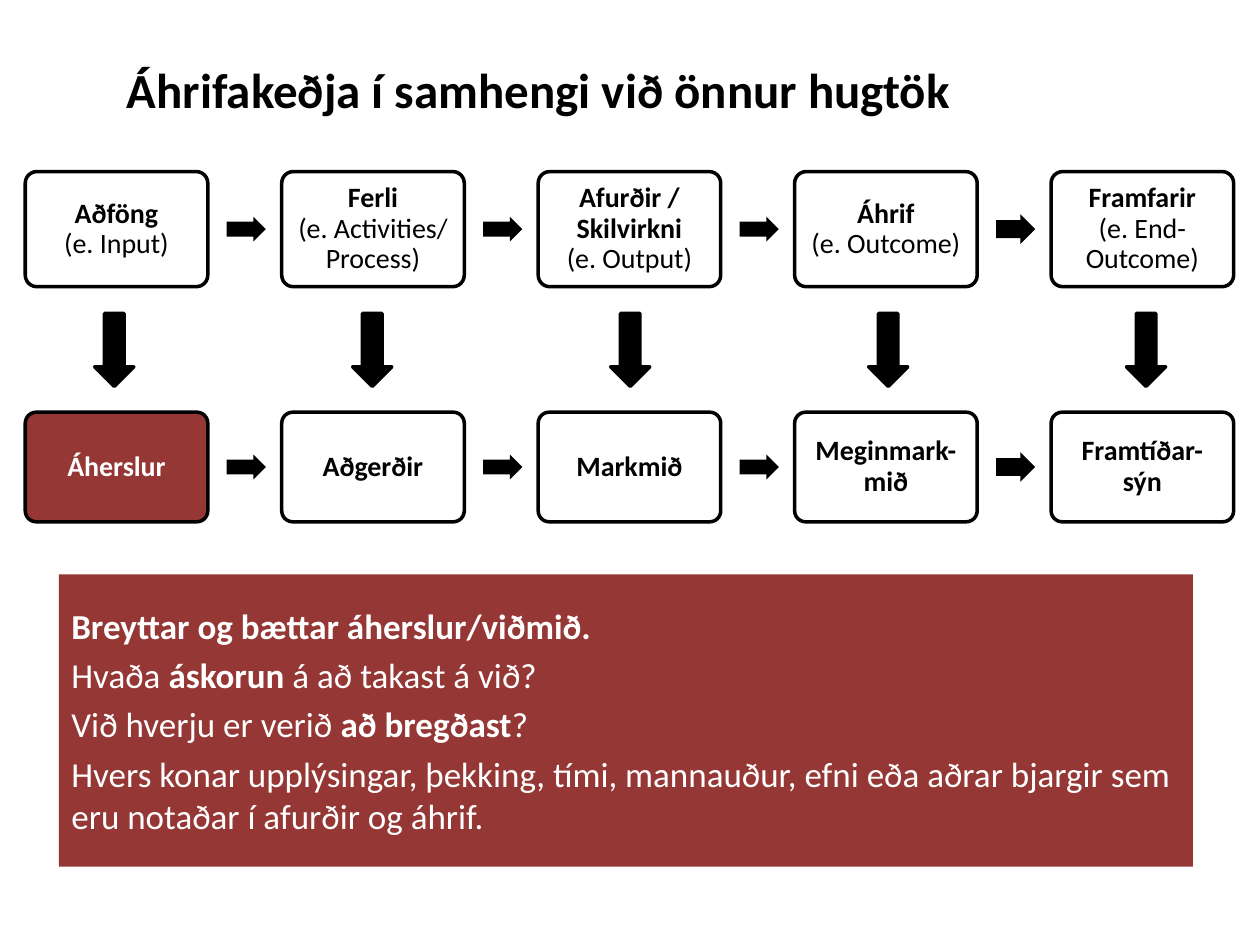
from pptx import Presentation
from pptx.dml.color import RGBColor
from pptx.enum.shapes import MSO_SHAPE
from pptx.enum.text import MSO_ANCHOR, PP_ALIGN
from pptx.util import Cm, Pt

BLACK = RGBColor(0x00, 0x00, 0x00)
WHITE = RGBColor(0xFF, 0xFF, 0xFF)
RED = RGBColor(0x95, 0x37, 0x35)

RECT = MSO_SHAPE.RECTANGLE
ROUND = MSO_SHAPE.ROUNDED_RECTANGLE
RIGHT = MSO_SHAPE.RIGHT_ARROW
DOWN = MSO_SHAPE.DOWN_ARROW
MIDDLE = MSO_ANCHOR.MIDDLE
CENTER = PP_ALIGN.CENTER
LEFT = PP_ALIGN.LEFT

PITCH = 5.17
CHAIN = [
    "Aðföng\n(e. Input)",
    "Ferli\n(e. Activities/ Process)",
    "Afurðir / Skilvirkni\n(e. Output)",
    "Áhrif\n(e. Outcome)",
    "Framfarir\n(e. End-Outcome)",
]
TERMS = ["Áherslur", "Aðgerðir", "Markmið", "Meginmark-mið", "Framtíðar-sýn"]
# Asterisks enclose the bold words.
NOTES = [
    "*Breyttar og bættar áherslur/viðmið.*",
    "Hvaða *áskorun* á að takast á við?",
    "Við hverju er verið *að bregðast*?",
    "Hvers konar upplýsingar, þekking, tími, mannauður, efni eða aðrar "
    "bjargir sem eru notaðar í afurðir og áhrif.",
]


class Deck:
    def __init__(self, slide, font="Calibri"):
        self.slide = slide
        self.font = font

    def style(self, run, size, color, bold):
        font = run.font
        font.name, font.size, font.bold = self.font, Pt(size), bold
        font.color.rgb = color

    def shape(self, kind, x, y, w, h, fill, line=None):
        item = self.slide.shapes.add_shape(kind, Cm(x), Cm(y), Cm(w), Cm(h))
        item.shadow.inherit = False
        item.fill.solid()
        item.fill.fore_color.rgb = fill
        if line is None:
            item.line.fill.background()
        else:
            item.line.color.rgb = line
            item.line.width = Pt(2)
        return item

    def title(self, text, x, y, w, h):
        box = self.slide.shapes.add_textbox(Cm(x), Cm(y), Cm(w), Cm(h))
        frame = box.text_frame
        frame.word_wrap = True
        frame.text = text
        self.style(frame.paragraphs[0].runs[0], 28, BLACK, True)

    def box(self, text, x, y, h, fill=WHITE, color=BLACK):
        """Draw a chain box whose first paragraph is bold."""
        item = self.shape(ROUND, x, y, 3.68, h, fill, BLACK)
        item.adjustments[0] = 0.1
        frame = item.text_frame
        frame.word_wrap = True
        frame.vertical_anchor = MIDDLE
        frame.margin_left = frame.margin_right = Cm(0.18)
        frame.margin_top = frame.margin_bottom = Cm(0.18)
        frame.text = text
        for i, para in enumerate(frame.paragraphs):
            para.alignment = CENTER
            para.line_spacing = 0.9
            self.style(para.runs[0], 16, color, i == 0)

    def arrow(self, x, mid, h):
        item = self.shape(RIGHT, x, mid - h / 2, 0.79, h, BLACK)
        item.adjustments[0] = 0.6
        item.adjustments[1] = 0.5

    def row(self, texts, y, h, first=(WHITE, BLACK)):
        """Draw a row of boxes joined by arrows; first colours its first box."""
        last = len(texts) - 1
        for i, text in enumerate(texts):
            x = 0.51 + i * PITCH
            fill, color = first if i == 0 else (WHITE, BLACK)
            self.box(text, x, y, h, fill, color)
            if i < last:
                self.arrow(x + 4.06, y + h / 2, 0.6 if i == last - 1 else 0.5)

    def drop(self, x, y):
        self.shape(DOWN, x, y, 0.79, 1.47, BLACK, BLACK)

    def panel(self, lines, x, y, w, h):
        frame = self.shape(RECT, x, y, w, h, RED).text_frame
        frame.word_wrap = True
        frame.vertical_anchor = MIDDLE
        for i, line in enumerate(lines):
            para = frame.add_paragraph() if i else frame.paragraphs[0]
            para.alignment = LEFT
            para.space_before = Pt(4)
            for j, part in enumerate(line.split("*")):
                if part:
                    run = para.add_run()
                    run.text = part
                    self.style(run, 20, WHITE, j % 2 == 1)


def main():
    show = Presentation()
    show.slide_width, show.slide_height = Cm(25.4), Cm(19.05)
    deck = Deck(show.slides.add_slide(show.slide_layouts[6]))
    deck.title("Áhrifakeðja í samhengi við önnur hugtök", 2.31, 1.07, 22.2, 1.45)
    deck.row(CHAIN, 3.46, 2.32)
    deck.row(TERMS, 8.31, 2.21, first=(RED, WHITE))
    for i in range(len(CHAIN)):
        deck.drop(1.91 + i * 5.2, 6.32)
    deck.panel(NOTES, 1.19, 11.58, 22.86, 5.89)
    show.save("out.pptx")


if __name__ == "__main__":
    main()
